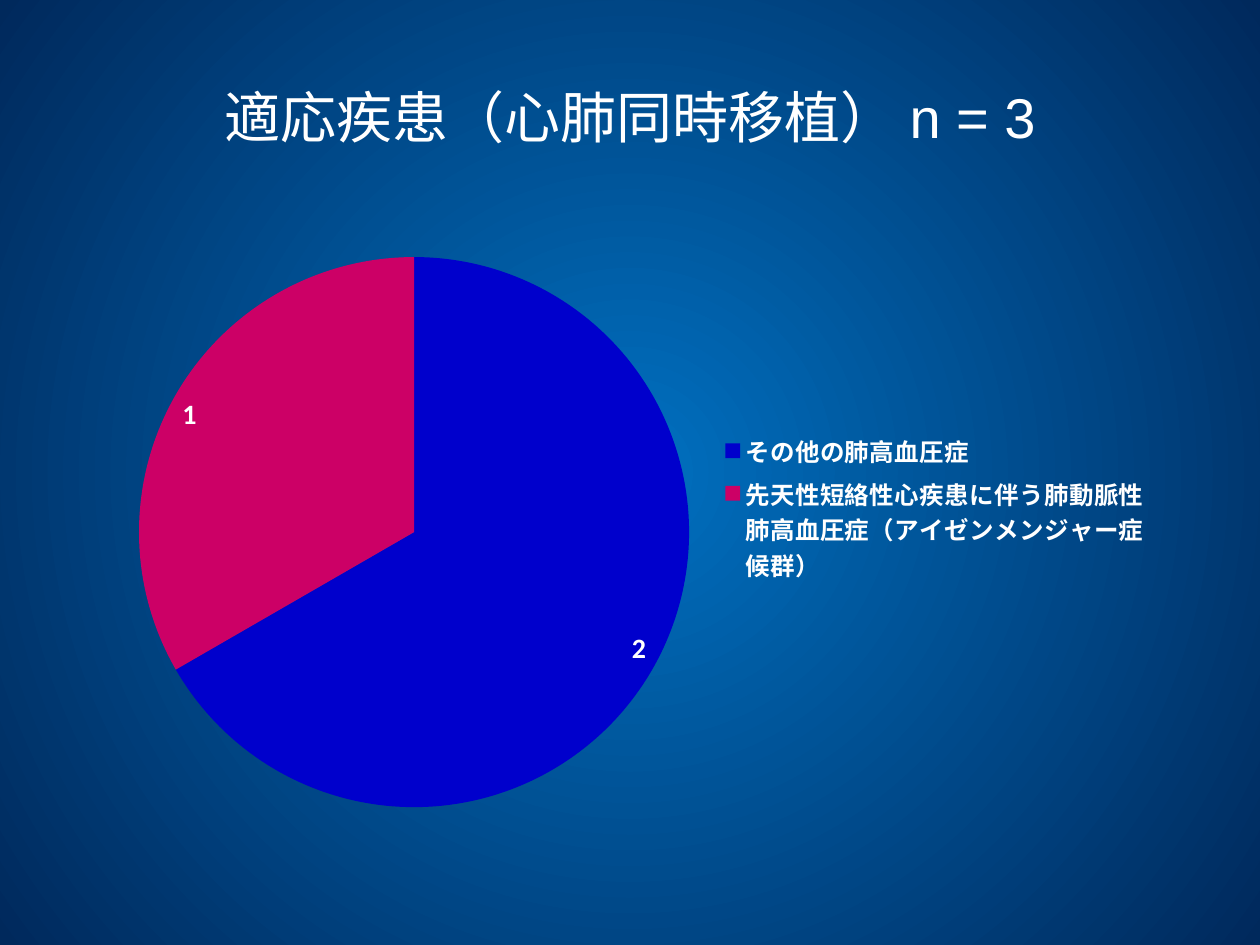
"""Build a slide with a pie chart of the diseases treated by heart-lung transplantation."""
import pptx
import pptx.chart.data
import pptx.dml.color
import pptx.enum.chart
import pptx.enum.text
import pptx.oxml
import pptx.oxml.ns
import pptx.util

Inches, Pt = pptx.util.Inches, pptx.util.Pt
rgb = pptx.dml.color.RGBColor.from_string
qn, nsdecls = pptx.oxml.ns.qn, pptx.oxml.ns.nsdecls

HEADING = "適応疾患（心肺同時移植） n = 3"
DISEASES = [
    ("その他の肺高血圧症", 2, "0000CC"),
    ("先天性短絡性心疾患に伴う肺動脈性肺高血圧症（アイゼンメンジャー症候群）", 1, "CC0066"),
]
THEME = {
    "glow": [(0, "0070C0"), (1, "00295C")],
    "heading": {"name": "Arial", "size": Pt(32), "color": "FFFFFF"},
    "chart": {"name": "Calibri", "size": Pt(10), "color": "FFFFFF"},
    "counts": {"name": "Calibri", "size": Pt(16), "bold": True, "color": "FFFFFF"},
    "legend": {"name": "Calibri", "size": Pt(14), "bold": True, "color": "FFFFFF"},
}
HEADING_BOX = (0.5, 0.3, 9, 1.25)
CHART_BOX = (0.36, 1.47, 9.29, 5.62)
PIE_AREA = {"x": 0.08, "y": 0.1, "w": 0.47, "h": 0.78}
LEGEND_AREA = {"x": 0.58, "y": 0.34, "w": 0.36, "h": 0.23}


def set_format(target, values):
    for key, value in values.items():
        if key == "color":
            target.color.rgb = rgb(value)
        else:
            setattr(target, key, value)


def place(part, area, before, inner=False):
    for old in part.findall(qn("c:layout")):
        part.remove(old)
    target = '<c:layoutTarget val="inner"/>' if inner else ""
    modes = "".join(f'<c:{axis}Mode val="edge"/>' for axis in "xy")
    sizes = "".join(f'<c:{key} val="{value}"/>' for key, value in area.items())
    layout = pptx.oxml.parse_xml(
        f'<c:layout {nsdecls("c")}><c:manualLayout>{target}{modes}{sizes}'
        "</c:manualLayout></c:layout>"
    )
    part.find(qn(before)).addprevious(layout)


def paint_background(slide):
    fill = slide.background.fill
    fill.gradient()
    for stop, (position, color) in zip(fill.gradient_stops, THEME["glow"]):
        stop.position = position
        stop.color.rgb = rgb(color)
    gradient = slide.element.find(".//" + qn("a:gradFill"))
    circle = pptx.oxml.parse_xml(
        f'<a:path {nsdecls("a")} path="circle">'
        '<a:fillToRect l="50000" t="50000" r="50000" b="50000"/></a:path>'
    )
    gradient.replace(gradient.find(qn("a:lin")), circle)


def add_heading(slide):
    frame = slide.shapes.add_textbox(*map(Inches, HEADING_BOX)).text_frame
    frame.word_wrap = True
    frame.vertical_anchor = pptx.enum.text.MSO_ANCHOR.MIDDLE
    paragraph = frame.paragraphs[0]
    paragraph.alignment = pptx.enum.text.PP_ALIGN.CENTER
    run = paragraph.add_run()
    run.text = HEADING
    set_format(run.font, THEME["heading"])


def add_disease_pie(slide):
    names, counts, colors = zip(*DISEASES)
    data = pptx.chart.data.CategoryChartData()
    data.categories = names
    data.add_series("Series 1", counts)
    pie_type = pptx.enum.chart.XL_CHART_TYPE.PIE
    pie = slide.shapes.add_chart(pie_type, *map(Inches, CHART_BOX), data).chart
    pie.has_title = False
    set_format(pie.font, {**THEME["chart"]})

    plot = pie.plots[0]
    plot.vary_by_categories = True
    for index, color in enumerate(colors):
        slice_format = plot.series[0].points[index].format
        slice_format.fill.solid()
        slice_format.fill.fore_color.rgb = rgb(color)
        slice_format.line.fill.background()

    plot.has_data_labels = True
    labels = plot.data_labels
    set_format(labels, {
        "show_value": True,
        "show_percentage": False,
        "position": pptx.enum.chart.XL_LABEL_POSITION.INSIDE_END,
    })
    set_format(labels.font, THEME["counts"])

    pie.has_legend = True
    set_format(pie.legend, {
        "position": pptx.enum.chart.XL_LEGEND_POSITION.RIGHT,
        "include_in_layout": False,
    })
    set_format(pie.legend.font, THEME["legend"])

    root = pie.element
    place(root.find(".//" + qn("c:plotArea")), PIE_AREA, "c:pieChart", inner=True)
    place(root.find(".//" + qn("c:legend")), LEGEND_AREA, "c:overlay")


def main():
    deck = pptx.Presentation()
    deck.slide_width, deck.slide_height = Inches(10), Inches(7.5)
    slide = deck.slides.add_slide(deck.slide_layouts[6])
    paint_background(slide)
    add_heading(slide)
    add_disease_pie(slide)
    deck.save("out.pptx")


if __name__ == "__main__":
    main()
